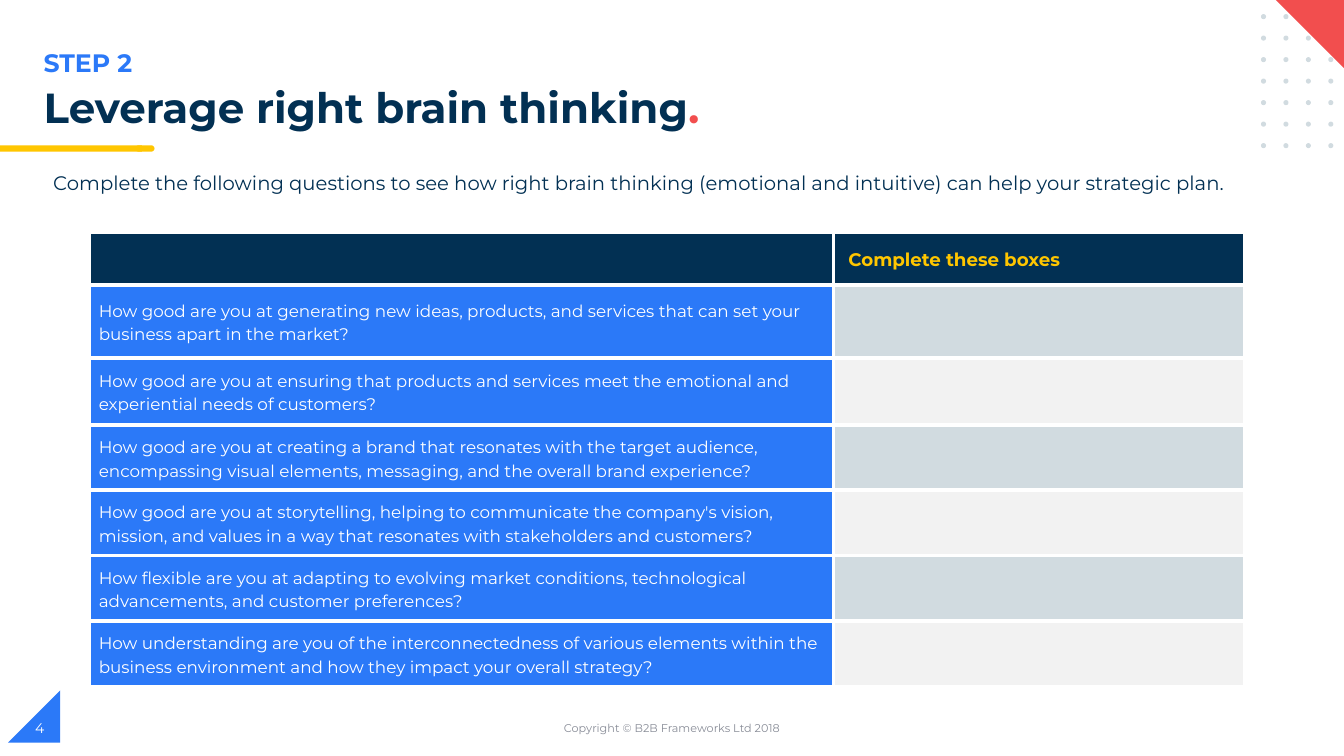
from dataclasses import dataclass

from lxml import etree
from pptx import Presentation
from pptx import util as u
from pptx.dml.color import RGBColor
from pptx.enum import shapes, text
from pptx.oxml import ns


@dataclass(frozen=True)
class Theme:
    font: str = "Montserrat"
    navy: str = "023053"
    blue: str = "2B79F8"
    yellow: str = "FFC600"
    red: str = "F24E4E"
    mist: str = "D1DBE0"
    pale: str = "F2F2F2"
    grey: str = "888C97"
    white: str = "FFFFFF"
    title: int = 30
    step: int = 18
    intro: int = 14
    header: int = 13
    body: int = 12
    number: int = 10
    footer: int = 8
    border: int = 3


class Slide:
    """One slide on a grid of 160 square columns by 90 rows."""

    COLUMNS, ROWS = 160, 90

    def __init__(self, deck, theme):
        self.theme = theme
        self.page = deck.slides.add_slide(deck.slide_layouts[5])
        self.column = deck.slide_width / self.COLUMNS
        self.row = deck.slide_height / self.ROWS

    def place(self, left, top, width, height):
        return (u.Emu(round(left * self.column)), u.Emu(round(top * self.row)),
                u.Emu(round(width * self.column)), u.Emu(round(height * self.row)))

    def add_spans(self, para, spans, size, bold=False):
        """Add (wording, colour) spans to a paragraph."""
        for wording, colour in spans:
            span = para.add_run()
            span.text = wording
            span.font.name = self.theme.font
            span.font.size = u.Pt(size)
            span.font.bold = bold
            span.font.color.rgb = RGBColor.from_string(colour)

    def title(self, grid, spans):
        box = self.page.shapes.title
        box.left, box.top, box.width, box.height = self.place(*grid)
        frame = box.text_frame
        frame.auto_size = text.MSO_AUTO_SIZE.NONE
        frame.word_wrap = True
        frame.vertical_anchor = text.MSO_ANCHOR.TOP
        para = frame.paragraphs[0]
        para.alignment = text.PP_ALIGN.LEFT
        para.line_spacing = 0.9
        self.add_spans(para, spans, self.theme.title, bold=True)

    def label(self, grid, wording, size, colour, bold=False,
              align=text.PP_ALIGN.LEFT, anchor=text.MSO_ANCHOR.TOP):
        frame = self.page.shapes.add_textbox(*self.place(*grid)).text_frame
        frame.word_wrap = True
        frame.vertical_anchor = anchor
        para = frame.paragraphs[0]
        para.alignment = align
        self.add_spans(para, [(wording, colour)], size, bold)

    def group(self):
        return self.page.shapes.add_group_shape()

    def shape(self, kind, grid, colour, rotation=0, group=None):
        parent = group or self.page
        shape = parent.shapes.add_shape(kind, *self.place(*grid))
        shape.shadow.inherit = False
        shape.fill.solid()
        shape.fill.fore_color.rgb = RGBColor.from_string(colour)
        shape.line.fill.background()
        shape.rotation = rotation

    def table(self, left, top, widths, heights):
        grid = self.place(left, top, sum(widths), sum(heights))
        table = self.page.shapes.add_table(len(heights), len(widths), *grid).table
        table.first_row = table.horz_banding = False
        for column, width in zip(table.columns, widths):
            column.width = round(width * self.column)
        for row, height in zip(table.rows, heights):
            row.height = round(height * self.row)
        return table

    def cell(self, cell, fill, wording="", colour="", size=0, bold=False, indent=0.1):
        properties = cell._tc.get_or_add_tcPr()
        for side in ("lnL", "lnR", "lnT", "lnB"):
            line = etree.SubElement(properties, ns.qn("a:" + side),
                                    w=str(u.Pt(self.theme.border)))
            solid = etree.SubElement(line, ns.qn("a:solidFill"))
            etree.SubElement(solid, ns.qn("a:srgbClr"), val=self.theme.white)
        cell.fill.solid()
        cell.fill.fore_color.rgb = RGBColor.from_string(fill)
        cell.vertical_anchor = text.MSO_ANCHOR.MIDDLE
        cell.margin_left, cell.margin_right = u.Inches(indent), u.Inches(0.1)
        cell.margin_top = cell.margin_bottom = 0
        if wording:
            para = cell.text_frame.paragraphs[0]
            para.line_spacing = 1.15
            self.add_spans(para, [(wording, colour)], size, bold)


QUESTIONS = [
    "How good are you at generating new ideas, products, and services that can set "
    "your business apart in the market?",
    "How good are you at ensuring that products and services meet the emotional and "
    "experiential needs of customers?",
    "How good are you at creating a brand that resonates with the target audience, "
    "encompassing visual elements, messaging, and the overall brand experience?",
    "How good are you at storytelling, helping to communicate the company's vision, "
    "mission, and values in a way that resonates with stakeholders and customers?",
    "How flexible are you at adapting to evolving market conditions, technological "
    "advancements, and customer preferences?",
    "How understanding are you of the interconnectedness of various elements within "
    "the business environment and how they impact your overall strategy?",
]


def main():
    deck = Presentation()
    deck.slide_width, deck.slide_height = u.Inches(13.33), u.Inches(7.5)
    theme = Theme()
    slide = Slide(deck, theme)
    preset = shapes.MSO_SHAPE

    # Page corner and yellow rule
    slide.shape(preset.RIGHT_TRIANGLE, (0.96, 82.2, 6.2, 6.2), theme.blue, rotation=270)
    rule = slide.group()
    slide.shape(preset.FLOWCHART_TERMINATOR, (16.1, 17.3, 2.3, 0.75), theme.yellow, group=rule)
    slide.shape(preset.RECTANGLE, (0, 17.3, 16.9, 0.75), theme.yellow, group=rule)

    # Dotted corner under the red triangle
    dots = slide.group()
    for row in range(7):
        for column in range(4):
            grid = (150.12 + 2.67 * column, 1.68 + 2.56 * row, 0.6, 0.6)
            slide.shape(preset.OVAL, grid, theme.mist, group=dots)
    slide.shape(preset.RIGHT_TRIANGLE, (151.8, -0.1, 8.6, 8.6), theme.red, rotation=180)

    # Headings
    slide.label((4, 5, 80, 4.8), "STEP 2", theme.step, theme.blue, bold=True)
    slide.title((4, 9.84, 133.8, 6.7),
                [("Leverage right brain thinking", theme.navy), (".", theme.red)])
    slide.label((5.16, 19.8, 143.6, 4.1),
                "Complete the following questions to see how right brain thinking "
                "(emotional and intuitive) can help your strategic plan.",
                theme.intro, theme.navy)

    # Question table
    table = slide.table(10.56, 27.6, [88.65, 49],
                        [6.36, 8.64, 8.04, 7.7, 7.8, 7.8, 7.8])
    slide.cell(table.cell(0, 0), theme.navy)
    slide.cell(table.cell(0, 1), theme.navy, "Complete these boxes",
               theme.yellow, theme.header, bold=True, indent=0.15)
    for row, question in enumerate(QUESTIONS, start=1):
        slide.cell(table.cell(row, 0), theme.blue, question, theme.white, theme.body)
        slide.cell(table.cell(row, 1), theme.mist if row % 2 else theme.pale)

    # Footer
    middle = text.MSO_ANCHOR.MIDDLE
    slide.label((53, 84.25, 54, 4.8), "Copyright © B2B Frameworks Ltd 2018",
                theme.footer, theme.grey, align=text.PP_ALIGN.CENTER, anchor=middle)
    slide.label((3, 84.25, 36, 4.8), "4", theme.number, theme.white, anchor=middle)

    deck.save("out.pptx")


if __name__ == "__main__":
    main()
